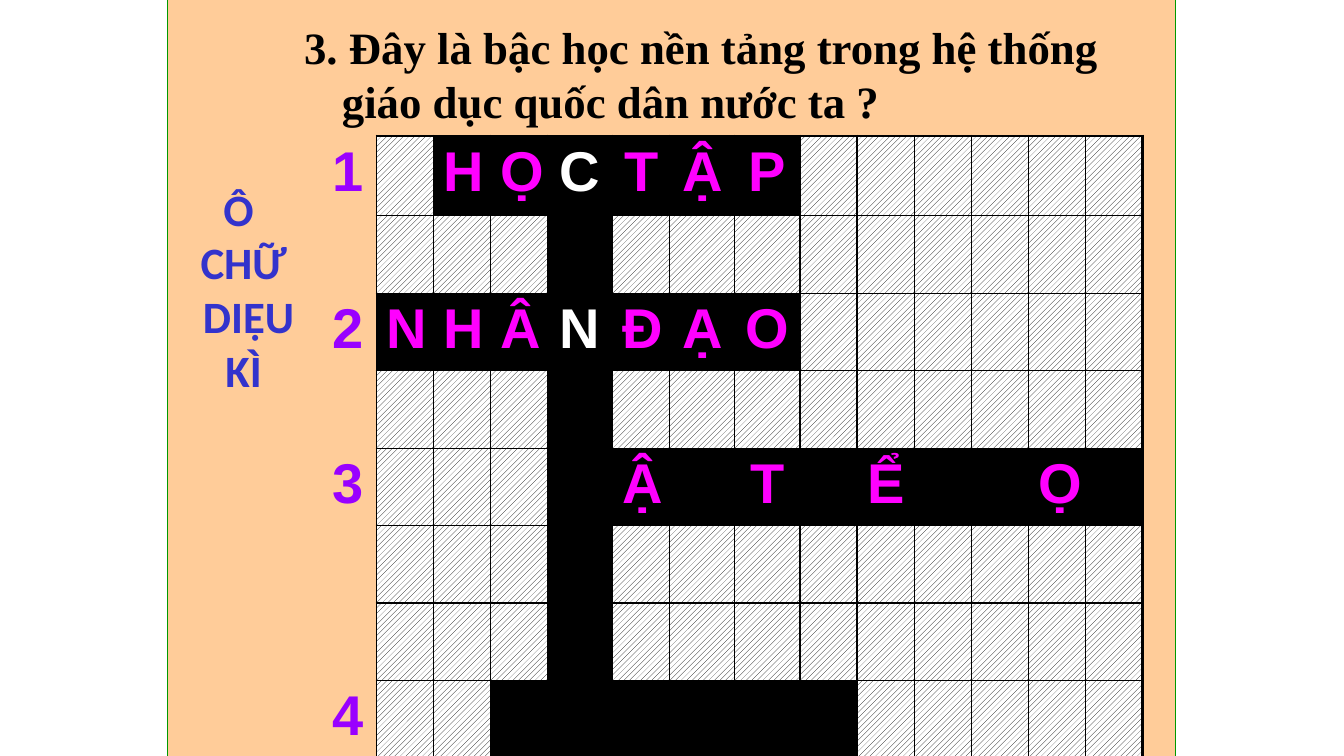
"""Build a crossword quiz slide with one clue and a partly solved grid."""
from dataclasses import dataclass
from typing import Any

from lxml import etree
from pptx import Presentation
from pptx.dml.color import RGBColor
from pptx.enum.dml import MSO_PATTERN
from pptx.enum.shapes import MSO_SHAPE
from pptx.enum.text import MSO_ANCHOR, MSO_AUTO_SIZE, PP_ALIGN
from pptx.oxml.ns import qn
from pptx.util import Inches, Pt

RECTANGLE = MSO_SHAPE.RECTANGLE
HATCH = MSO_PATTERN.WIDE_UPWARD_DIAGONAL
TOP = MSO_ANCHOR.TOP
GROW, FIXED = MSO_AUTO_SIZE.SHAPE_TO_FIT_TEXT, MSO_AUTO_SIZE.NONE
LEFT, CENTER = PP_ALIGN.LEFT, PP_ALIGN.CENTER

UNIT = Inches(1 / 12)
SLIDE_COLUMNS, SLIDE_ROWS = 160, 90
TITLE_ONLY_LAYOUT = 5


@dataclass(frozen=True)
class Theme:
    """Colours, fonts and point sizes of the slide."""

    black: str = "000000"
    white: str = "FFFFFF"
    peach: str = "FFCC99"
    green: str = "009900"
    violet: str = "9900FF"
    magenta: str = "FF00FF"
    silver: str = "B2B2B2"
    blue: str = "3333CC"
    grid_font: str = "Arial"
    label_font: str = "Calibri"
    question_font: str = "Times New Roman"
    letter_size: float = 40
    text_size: float = 32
    panel_line: float = 0.75
    thin_line: float = 1
    thick_line: float = 2.25


@dataclass(frozen=True)
class Area:
    """Place on the slide, in grid units."""

    left: float
    top: float
    width: float
    height: float

    def emu(self) -> tuple[int, ...]:
        """Return left, top, width and height in EMU."""
        return tuple(round(n * UNIT) for n in (self.left, self.top, self.width, self.height))


@dataclass(frozen=True)
class Row:
    """Crossword row: '#' is hatched, '.' is a hidden letter."""

    number: str
    letters: str


THEME = Theme()
PANEL = Area(20, -1, 120, 94.2)
QUESTION_AREA = Area(35, 1.8, 105, 14)
LABEL_AREA = Area(22, 21, 14, 64)
QUESTION = "3. Đây là bậc học nền tảng trong hệ thống giáo dục quốc dân nước ta ?"
QUESTION_INDENT = round(4.5 * UNIT)
LABEL_LINES = ("Ô ", "CHỮ", " DIỆU", "KÌ")

KEY_COLUMN = 4
WIDE_COLUMNS = (4, 6, 7)
SPACER = Row("", "###.#########")
CROSSWORD = (
    Row("1", "#HỌCTẬP######"),
    SPACER,
    Row("2", "NHÂNĐẠO######"),
    SPACER,
    Row("3", "###.Ậ.T.Ể..Ọ."),
    SPACER,
    SPACER,
    Row("4", "##......#####"),
)
COLUMN_WIDTHS = [7.75 if c in WIDE_COLUMNS else 6.8 for c in range(14)]
ROW_HEIGHTS = [9.5] + [9.22] * 7
GRID_AREA = Area(38, 16.2, sum(COLUMN_WIDTHS), sum(ROW_HEIGHTS))


def set_all(target: Any, values: dict[str, Any]) -> None:
    """Set each named attribute of the target."""
    for name, value in values.items():
        setattr(target, name, value)


def paint(fill: Any, color: str) -> None:
    """Give a fill one solid colour."""
    fill.solid()
    fill.fore_color.rgb = RGBColor.from_string(color)


def style_font(font: Any, face: str, size: float, color: str) -> None:
    """Format bold text."""
    set_all(font, {"name": face, "size": Pt(size), "bold": True})
    paint(font.fill, color)


def line_element(tag: str, width: float, color: str) -> Any:
    """Return a line element; zero width means no line."""
    line = etree.Element(qn(tag), w=str(Pt(width)))
    if width:
        solid = etree.SubElement(line, qn("a:solidFill"))
        etree.SubElement(solid, qn("a:srgbClr"), val=color)
    else:
        etree.SubElement(line, qn("a:noFill"))
    return line


def draw_panel(slide: Any) -> None:
    """Draw the peach panel behind the puzzle."""
    panel = slide.shapes.add_shape(RECTANGLE, *PANEL.emu())
    panel.shadow.inherit = False
    paint(panel.fill, THEME.peach)
    paint(panel.line.fill, THEME.green)
    panel.line.width = Pt(THEME.panel_line)


def border_widths(row: int, column: int) -> tuple[float, ...]:
    """Return the left, right, top and bottom border widths of a cell."""
    thin, thick = THEME.thin_line, THEME.thick_line
    if column == 0:
        return 0, thin, 0, 0
    return (
        thin,
        thick if column == len(COLUMN_WIDTHS) - 1 else thin,
        thick if row == 0 else thin,
        thick if row == len(CROSSWORD) - 1 else thin,
    )


def draw_cell(cell: Any, mark: str, row: int, column: int) -> None:
    """Fill, border and letter one crossword cell."""
    if mark == "#":
        cell.fill.patterned()
        cell.fill.pattern = HATCH
        cell.fill.fore_color.rgb = RGBColor.from_string(THEME.black)
        cell.fill.back_color.rgb = RGBColor.from_string(THEME.white)
    else:
        paint(cell.fill, THEME.black if column else THEME.peach)
    properties = cell._tc.get_or_add_tcPr()
    for index, (side, width) in enumerate(zip("LRTB", border_widths(row, column))):
        properties.insert(index, line_element(f"a:ln{side}", width, THEME.black))
    if mark and mark not in "#.":
        color = {0: THEME.violet, KEY_COLUMN: THEME.white}.get(column, THEME.magenta)
        paragraph = cell.text_frame.paragraphs[0]
        paragraph.alignment = CENTER
        letter = paragraph.add_run()
        letter.text = mark
        style_font(letter.font, THEME.grid_font, THEME.letter_size, color)


def draw_crossword(slide: Any) -> None:
    """Draw the numbered crossword table."""
    size = len(CROSSWORD), len(COLUMN_WIDTHS)
    table = slide.shapes.add_table(*size, *GRID_AREA.emu()).table
    set_all(table, {"first_row": False, "horz_banding": False})
    for column, width in zip(table.columns, COLUMN_WIDTHS):
        column.width = round(width * UNIT)
    for r, (entry, height) in enumerate(zip(CROSSWORD, ROW_HEIGHTS)):
        table.rows[r].height = round(height * UNIT)
        for c, mark in enumerate([entry.number, *entry.letters]):
            draw_cell(table.cell(r, c), mark, r, c)


def draw_label(slide: Any) -> None:
    """Write the outlined puzzle name beside the grid."""
    frame = slide.shapes.add_textbox(*LABEL_AREA.emu()).text_frame
    set_all(frame, {"word_wrap": False, "auto_size": FIXED, "text": "\n".join(LABEL_LINES)})
    for paragraph in frame.paragraphs:
        paragraph.alignment = CENTER
        font = paragraph.runs[0].font
        style_font(font, THEME.label_font, THEME.text_size, THEME.silver)
        properties = paragraph.runs[0]._r.get_or_add_rPr()
        etree.SubElement(properties.find(".//" + qn("a:srgbClr")), qn("a:alpha"), val="50000")
        properties.insert(0, line_element("a:ln", THEME.thin_line, THEME.blue))


def draw_question(slide: Any) -> None:
    """Write the clue in the title placeholder, above the panel."""
    title = slide.shapes.title
    title.element.getparent().append(title.element)
    set_all(title, dict(zip(("left", "top", "width", "height"), QUESTION_AREA.emu())))
    frame = title.text_frame
    set_all(frame, {"text": QUESTION, "word_wrap": True, "auto_size": GROW, "vertical_anchor": TOP})
    paragraph = frame.paragraphs[0]
    paragraph.alignment = LEFT
    properties = paragraph._p.get_or_add_pPr()
    properties.set("marL", str(QUESTION_INDENT))
    properties.set("indent", str(-QUESTION_INDENT))
    style_font(paragraph.runs[0].font, THEME.question_font, THEME.text_size, THEME.black)


def main() -> None:
    """Build and save the slide."""
    deck = Presentation()
    set_all(deck, {"slide_width": SLIDE_COLUMNS * UNIT, "slide_height": SLIDE_ROWS * UNIT})
    slide = deck.slides.add_slide(deck.slide_layouts[TITLE_ONLY_LAYOUT])
    for draw in (draw_panel, draw_crossword, draw_label, draw_question):
        draw(slide)
    deck.save("out.pptx")


if __name__ == "__main__":
    main()
